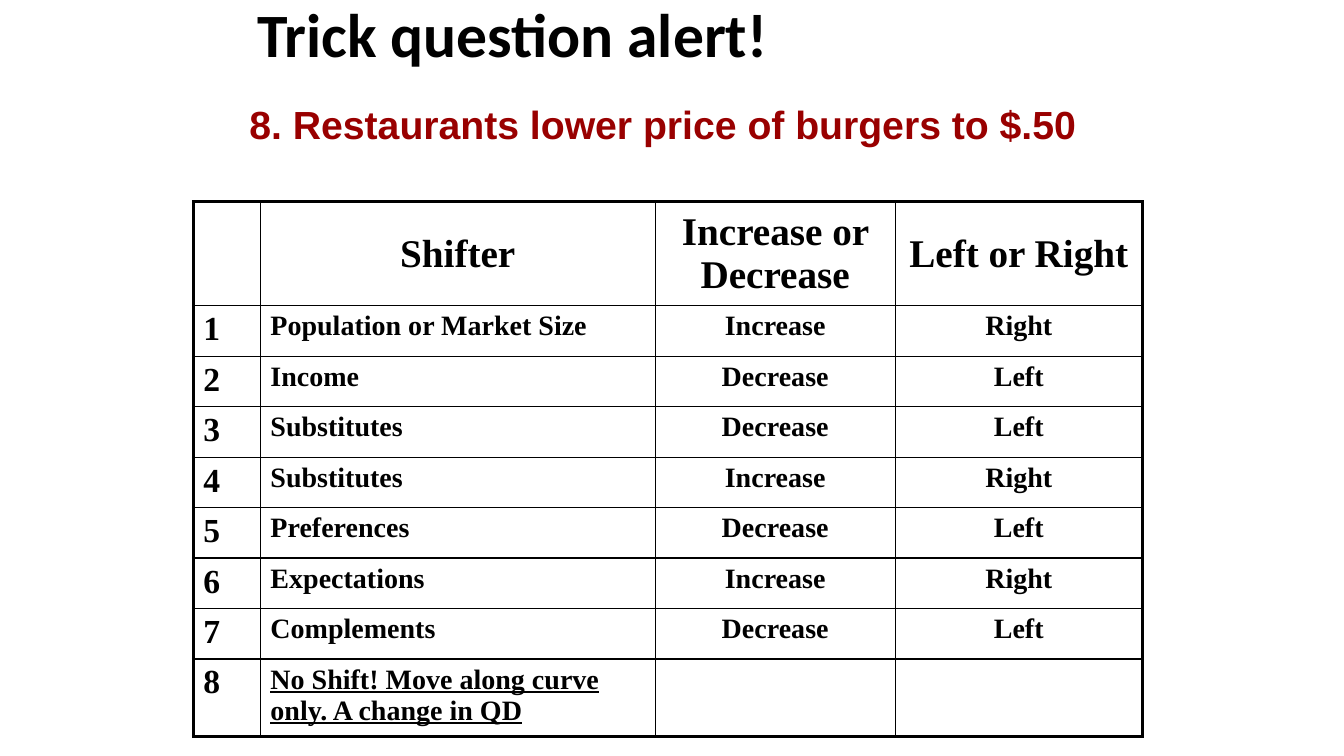
from lxml.etree import SubElement as Sub
from pptx import Presentation
from pptx.dml.color import RGBColor
from pptx.enum.text import MSO_ANCHOR as Anchor, MSO_AUTO_SIZE as Auto, PP_ALIGN as Align
from pptx.oxml.ns import qn
from pptx.util import Pt

BLACK, RED = "000000", "990000"
THIN, THICK = 1, 2.25


def tint(code):
    return RGBColor.from_string(code)


class Deck:
    """Holds the text styles and the current slide."""

    styles = {
        "title": dict(name="Calibri", size=Pt(44), bold=True),
        "quiz": dict(name="Arial", size=Pt(28), bold=True),
        "head": dict(name="Times New Roman", size=Pt(28), bold=True),
        "num": dict(name="Times New Roman", size=Pt(24), bold=True),
        "cell": dict(name="Times New Roman", size=Pt(20), bold=True),
        "key": dict(name="Times New Roman", size=Pt(20), bold=True, underline=True),
    }

    def __init__(self):
        self.prs = Presentation()
        self.prs.slide_width, self.prs.slide_height = Pt(960), Pt(540)
        self.slide = self.prs.slides.add_slide(self.prs.slide_layouts[5])

    def put(self, frame, text, style, color=BLACK, align=Align.LEFT):
        para = frame.paragraphs[0]
        para.alignment = align
        para.space_before = Pt(0)
        run = para.add_run()
        run.text = text
        for key, value in self.styles[style].items():
            setattr(run.font, key, value)
        run.font.color.rgb = tint(color)
        return para

    def title(self, text, left, top, width, height):
        shape = self.slide.shapes.title
        place = dict(left=left, top=top, width=width, height=height)
        for key, value in place.items():
            setattr(shape, key, Pt(value))
        frame = shape.text_frame
        form = dict(word_wrap=True, auto_size=Auto.NONE, vertical_anchor=Anchor.MIDDLE)
        for side in ("left", "top", "right", "bottom"):
            form[f"margin_{side}"] = Pt(3.6)
        for key, value in form.items():
            setattr(frame, key, value)
        self.put(frame, text, "title").line_spacing = 0.9

    def label(self, text, left, top, width, height, indent):
        box = self.slide.shapes.add_textbox(Pt(left), Pt(top), Pt(width), Pt(height))
        frame = box.text_frame
        frame.word_wrap = True
        frame.auto_size = Auto.SHAPE_TO_FIT_TEXT
        para = self.put(frame, text, "quiz", RED)
        para.line_spacing = 0.9
        props = para._p.get_or_add_pPr()
        props.set("marL", "0")
        props.set("indent", str(Pt(indent)))

    def edge(self, cell, sides):
        props = cell._tc.get_or_add_tcPr()
        for side, width in sides.items():
            line = Sub(props, qn(f"a:ln{side}"), w=str(Pt(width)))
            fill = Sub(line, qn("a:solidFill"))
            Sub(fill, qn("a:srgbClr"), val=BLACK)

    def table(self, rows, left, top, widths, heights):
        frame = self.slide.shapes.add_table(
            len(rows), len(widths), Pt(left), Pt(top), Pt(sum(widths)), Pt(sum(heights)))
        grid = frame.table
        grid.first_row = grid.horz_banding = False
        for col, width in zip(grid.columns, widths):
            col.width = Pt(width)
        for row, height in zip(grid.rows, heights):
            row.height = Pt(height)
        last, end = len(rows) - 1, len(widths) - 1
        for r, row in enumerate(rows):
            for c, text in enumerate(row):
                cell = grid.cell(r, c)
                # Thick frame, thin inner lines
                self.edge(cell, {
                    "L": THICK if c == 0 else THIN,
                    "R": THICK if c == end else THIN,
                    "T": THICK if r == 0 else THIN,
                    "B": THICK if r == last else THIN,
                })
                cell.fill.background()
                cell.vertical_anchor = Anchor.MIDDLE if r == 0 else Anchor.TOP
                if not text:
                    continue
                style = ("head" if r == 0 else "num" if c == 0
                         else "key" if r == last else "cell")
                align = Align.CENTER if r == 0 or c > 1 else Align.LEFT
                self.put(cell.text_frame, text, style, align=align)


def main():
    deck = Deck()

    # Heading and question
    deck.title("Trick question alert!", 180, -18, 612, 90)
    deck.label("8. Restaurants lower price of burgers to $.50", 135, 72, 702, 37.5, 36)

    # Answers: the change sets the side
    side = {"Increase": "Right", "Decrease": "Left", "": ""}
    answers = [
        ("Population or Market Size", "Increase"),
        ("Income", "Decrease"),
        ("Substitutes", "Decrease"),
        ("Substitutes", "Increase"),
        ("Preferences", "Decrease"),
        ("Expectations", "Increase"),
        ("Complements", "Decrease"),
        ("No Shift! Move along curve only. A change in QD", ""),
    ]
    rows = [("", "Shifter", "Increase or Decrease", "Left or Right")]
    rows += [(str(n), name, move, side[move])
             for n, (name, move) in enumerate(answers, 1)]
    deck.table(rows, 138, 144, [48, 282, 171.5, 176.5], [74] + [36] * 7 + [55.5])

    deck.prs.save("out.pptx")


if __name__ == "__main__":
    main()
